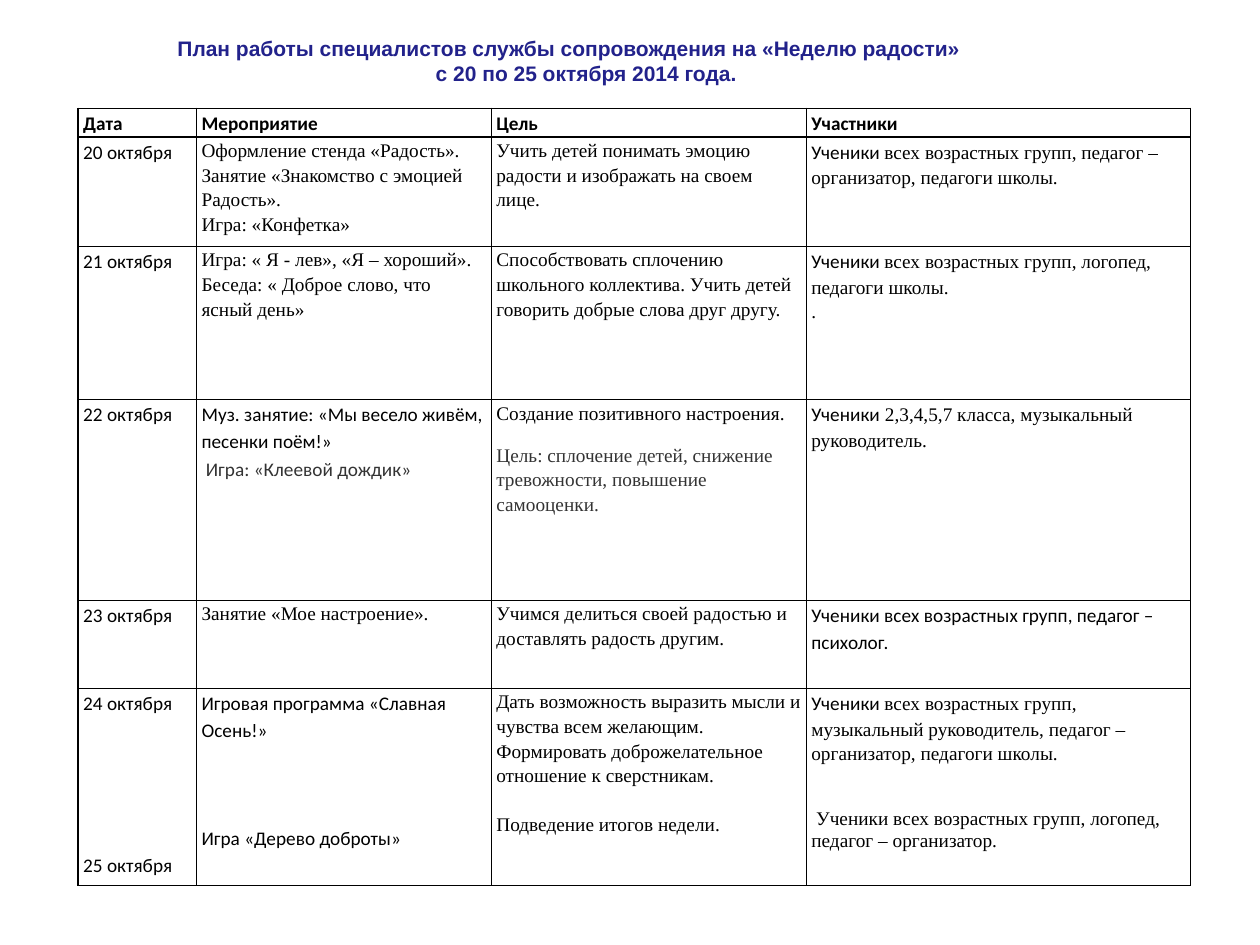
from dataclasses import dataclass

from lxml.etree import SubElement
from pptx import Presentation
from pptx.dml.color import RGBColor
from pptx.enum.text import MSO_ANCHOR, MSO_AUTO_SIZE
from pptx.oxml.ns import qn
from pptx.util import Inches, Pt


@dataclass(frozen=True)
class Theme:
    heading_font: str = "Arial"
    sans: str = "Calibri"
    serif: str = "Times New Roman"
    heading_color: str = "22228B"
    ink: str = "000000"
    grey: str = "333333"
    heading_size: int = 12
    body_size: int = 11
    border_width: int = 1
    line_spacing: float = 1.15


THEME = Theme()


@dataclass
class Para:
    runs: list  # (text, font name) pairs
    color: str = THEME.ink
    before: int = 0
    after: int = 0
    spacing: float = THEME.line_spacing


def sans(text, **options):
    return Para([(text, THEME.sans)], **options)


def serif(text, **options):
    return Para([(text, THEME.serif)], **options)


def pupils(lead, rest):
    return Para([(lead, THEME.sans), (rest, THEME.serif)])


HEADING = [  # text, left indent in inches
    ("План работы специалистов службы сопровождения на «Неделю радости»", 1),
    ("с 20 по 25 октября 2014 года.", 3.05),
]
HEADERS = ["Дата", "Мероприятие", "Цель", "Участники"]
COLUMN_WIDTHS = [0.94, 2.34, 2.5, 3.05]
ROW_HEIGHTS = [0.23, 0.87, 1.22, 1.6, 0.7, 1.57]

DAYS = [
    [
        [sans("20 октября")],
        [serif("Оформление стенда «Радость»."),
         serif("Занятие «Знакомство с эмоцией Радость»."),
         serif("Игра: «Конфетка»")],
        [serif("Учить детей понимать эмоцию радости и изображать на своем лице.")],
        [pupils("Ученики ", "всех возрастных групп, педагог – организатор, педагоги школы.")],
    ],
    [
        [sans("21 октября")],
        [serif("Игра: « Я - лев», «Я – хороший»."),
         serif("Беседа: « Доброе слово, что ясный день»")],
        [serif("Способствовать сплочению школьного коллектива. "
               "Учить детей говорить добрые слова друг другу.")],
        [pupils("Ученики ", "всех возрастных групп, логопед, педагоги школы."),
         serif(".")],
    ],
    [
        [sans("22 октября")],
        [sans("Муз. занятие: «Мы весело живём, песенки поём!»"),
         sans(" Игра: «Клеевой дождик»", color=THEME.grey)],
        [serif("Создание позитивного настроения.", after=10),
         serif("Цель: сплочение детей, снижение тревожности, повышение самооценки.",
               color=THEME.grey, after=10)],
        [pupils("Ученики", " 2,3,4,5,7 класса, музыкальный руководитель.")],
    ],
    [
        [sans("23 октября")],
        [serif("Занятие «Мое настроение».")],
        [serif("Учимся делиться своей радостью и доставлять радость другим.")],
        [sans("Ученики всех возрастных групп, педагог – психолог.")],
    ],
    [
        [sans("24 октября"), sans("25 октября", before=77)],
        [sans("Игровая программа «Славная Осень!»"),
         sans("Игра «Дерево доброты»", before=46)],
        [serif("Дать возможность выразить мысли и чувства всем желающим. "
               "Формировать доброжелательное отношение к сверстникам."),
         serif("Подведение итогов недели.", before=14)],
        [pupils("Ученики ", "всех возрастных групп, музыкальный руководитель, "
                            "педагог – организатор, педагоги школы."),
         serif(" Ученики всех возрастных групп, логопед, педагог – организатор.",
               before=25, spacing=1.0)],
    ],
]


def style_font(font, name, size, color, bold=False):
    font.name = name
    font.size = Pt(size)
    font.bold = bold
    font.color.rgb = RGBColor.from_string(color)


def add_heading(slide, left, top, width, height):
    frame = slide.shapes.add_textbox(left, top, width, height).text_frame
    frame.word_wrap = True
    frame.auto_size = MSO_AUTO_SIZE.SHAPE_TO_FIT_TEXT
    frame.vertical_anchor = MSO_ANCHOR.MIDDLE
    frame.text = "\n".join(text for text, _ in HEADING)
    for paragraph, (_, indent) in zip(frame.paragraphs, HEADING):
        paragraph._p.get_or_add_pPr().set("marL", str(Inches(indent)))
        style_font(paragraph.runs[0].font, THEME.heading_font,
                   THEME.heading_size, THEME.heading_color, bold=True)


def style_cell(cell):
    cell.margin_left = cell.margin_right = Inches(0.04)
    cell.margin_top = cell.margin_bottom = 0
    properties = cell._tc.get_or_add_tcPr()
    for side in ("lnL", "lnR", "lnT", "lnB"):
        line = SubElement(properties, qn(f"a:{side}"), w=str(Pt(THEME.border_width)))
        fill = SubElement(line, qn("a:solidFill"))
        SubElement(fill, qn("a:srgbClr"), val=THEME.ink)
    cell.fill.background()


def fill_cell(cell, paras, bold):
    style_cell(cell)
    frame = cell.text_frame
    for index, para in enumerate(paras):
        paragraph = frame.add_paragraph() if index else frame.paragraphs[0]
        paragraph.line_spacing = para.spacing
        if para.before:
            paragraph.space_before = Pt(para.before)
        if para.after:
            paragraph.space_after = Pt(para.after)
        for text, font_name in para.runs:
            run = paragraph.add_run()
            run.text = text
            style_font(run.font, font_name, THEME.body_size, para.color, bold)


def add_plan(slide, left, top, width, height):
    rows = [[[sans(header)] for header in HEADERS]] + DAYS
    plan = slide.shapes.add_table(len(rows), len(HEADERS), left, top, width, height).table
    plan.first_row = plan.horz_banding = False
    for column, share in zip(plan.columns, COLUMN_WIDTHS):
        column.width = int(width * share / sum(COLUMN_WIDTHS))
    for row, share in zip(plan.rows, ROW_HEIGHTS):
        row.height = int(height * share / sum(ROW_HEIGHTS))
    for row_index, row in enumerate(rows):
        for column_index, paras in enumerate(row):
            fill_cell(plan.cell(row_index, column_index), paras, bold=row_index == 0)


def main():
    presentation = Presentation()
    presentation.slide_width = Inches(10)
    presentation.slide_height = Inches(7.5)
    slide = presentation.slides.add_slide(presentation.slide_layouts[6])
    # Weekly plan table
    add_plan(slide, Inches(0.62), Inches(0.86), Inches(8.83), Inches(6.17))
    # Heading above the table
    add_heading(slide, Inches(0.31), Inches(0.23), Inches(9.38), Inches(0.5))
    presentation.save("out.pptx")


if __name__ == "__main__":
    main()
